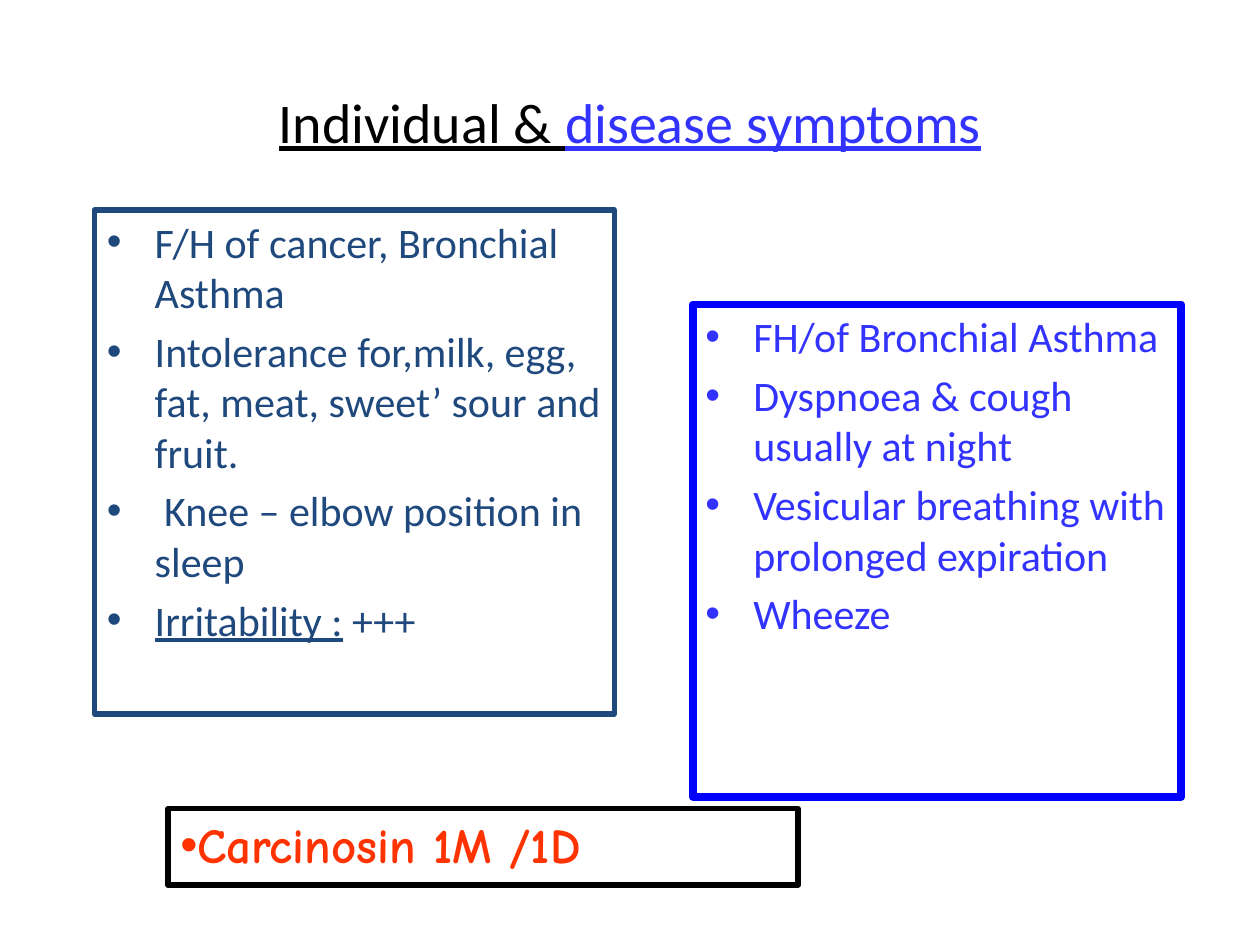
"""Build a slide that sets individual symptoms beside disease symptoms, with the remedy below."""
from lxml import etree
from pptx import Presentation
from pptx import util as u
from pptx.dml.color import RGBColor
from pptx.enum import text
from pptx.oxml.ns import qn

COLORS = {"black": "000000", "navy": "1F497D", "blue": "0000FF", "violet": "3333FF", "red": "FF3300"}

presentation = Presentation()
presentation.slide_width, presentation.slide_height = u.Inches(10), u.Inches(7.5)
slide = presentation.slides.add_slide(presentation.slide_layouts[6])
CELL = presentation.slide_width / 24


def add_box(column, row, columns, rows, border=None, weight=0):
    shape = slide.shapes.add_textbox(*(round(CELL * n) for n in (column, row, columns, rows)))
    shape.text_frame.word_wrap = True
    if border:
        shape.line.color.rgb = RGBColor.from_string(COLORS[border])
        shape.line.width = u.Pt(weight)
    return shape.text_frame


def add_run(paragraph, words, size, color, underline=False, font="Calibri", bold=False):
    run = paragraph.add_run()
    run.text = words
    run.font.name, run.font.size = font, u.Pt(size)
    run.font.bold, run.font.underline = bold, underline
    run.font.color.rgb = RGBColor.from_string(COLORS[color])


title = add_box(2, 1.2, 20, 2.2)
title.vertical_anchor = text.MSO_ANCHOR.MIDDLE
title.paragraphs[0].alignment = text.PP_ALIGN.CENTER
add_run(title.paragraphs[0], "Individual & ", 32, "black", underline=True)
add_run(title.paragraphs[0], "disease symptoms", 32, "violet", underline=True)

individual = add_box(1.8, 4, 9.9, 9.6, "navy", 3)
disease = add_box(13.2, 5.8, 9.3, 9.38, "blue", 4.5)
remedy = add_box(3.2, 15.4, 12, 1.46, "black", 3)

lists = [
    (individual, 24, "navy", "Calibri", 0.38, [
        [("F/H of cancer, Bronchial Asthma", False)],
        [("Intolerance for,milk, egg, fat, meat, sweet’ sour and fruit.", False)],
        [(" Knee – elbow position in sleep", False)],
        [("Irritability :", True), (" +++", False)],
    ]),
    (disease, 24, "violet", "Calibri", 0.38, [
        [("FH/of Bronchial Asthma", False)],
        [("Dyspnoea & cough usually at night", False)],
        [("Vesicular breathing with prolonged expiration", False)],
        [("Wheeze", False)],
    ]),
    (remedy, 28, "red", "Comic Neue", 0, [[("Carcinosin 1M /1D", False)]]),
]

for frame, size, color, font, indent, items in lists:
    for index, runs in enumerate(items):
        paragraph = frame.add_paragraph() if index else frame.paragraphs[0]
        paragraph.space_before = u.Pt(size * 0.2)
        properties = paragraph._p.get_or_add_pPr()
        properties.set("marL", str(u.Inches(indent)))
        properties.set("indent", str(-u.Inches(indent)))
        etree.SubElement(properties, qn("a:buFont"), typeface="Arial")
        etree.SubElement(properties, qn("a:buChar"), char="•")
        for words, underline in runs:
            add_run(paragraph, words, size, color, underline, font, bold=frame is remedy)

presentation.save("out.pptx")
